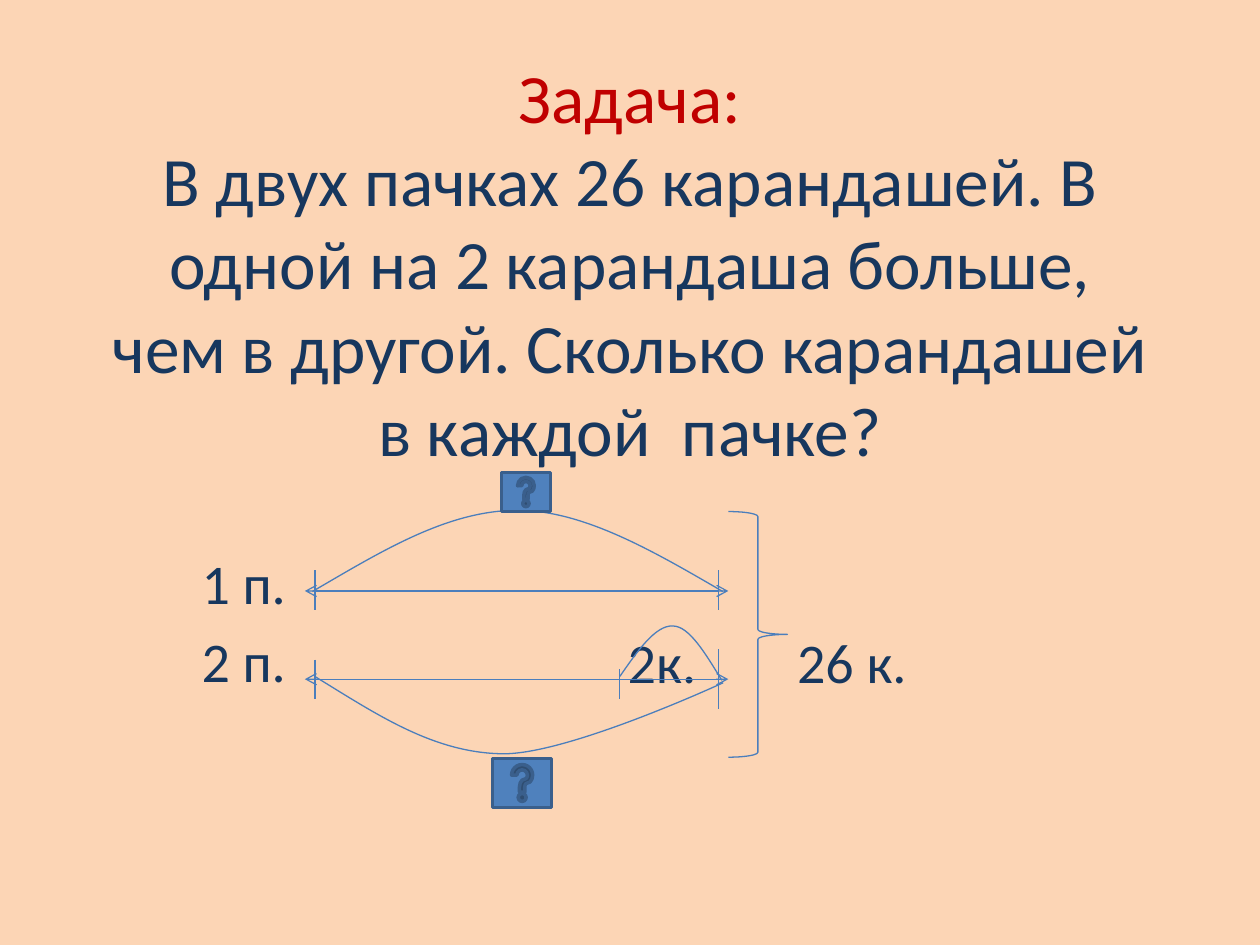
from lxml import etree
from pptx import Presentation
from pptx.dml.color import RGBColor
from pptx.enum.shapes import MSO_CONNECTOR, MSO_SHAPE
from pptx.enum.text import MSO_ANCHOR, MSO_AUTO_SIZE, PP_ALIGN
from pptx.oxml.ns import qn
from pptx.util import Pt

STRAIGHT = MSO_CONNECTOR.STRAIGHT
BRACE, HELP = MSO_SHAPE.RIGHT_BRACE, MSO_SHAPE.ACTION_BUTTON_HELP
TOP, MIDDLE = MSO_ANCHOR.TOP, MSO_ANCHOR.MIDDLE
CENTER, JUSTIFY = PP_ALIGN.CENTER, PP_ALIGN.JUSTIFY
NO_FIT = MSO_AUTO_SIZE.NONE

PEACH, RED, NAVY = "FCD5B5", "C00000", "17375E"
LINE, BUTTON, BUTTON_EDGE = "4B7EBC", "4F81BD", "3A5F8C"


def rgb(value):
    return RGBColor.from_string(value)


def prepare_text(sp, box, anchor):
    sp.left, sp.top, sp.width, sp.height = map(Pt, box)
    tf = sp.text_frame
    for name, value in {"word_wrap": True, "auto_size": NO_FIT,
                        "vertical_anchor": anchor}.items():
        setattr(tf, name, value)
    return tf


def add_run(p, text, size, color):
    r = p.add_run()
    r.text = text
    for name, value in {"size": Pt(size), "name": "Calibri"}.items():
        setattr(r.font, name, value)
    r.font.color.rgb = rgb(color)


def set_outline(sp, color=LINE, width=0.75):
    sp.line.color.rgb = rgb(color)
    sp.line.width = Pt(width)


def add_title(s, box):
    p = prepare_text(s.shapes.title, box, MIDDLE).paragraphs[0]
    p.alignment = CENTER
    add_run(p, "Задача:", 39.6, RED)
    p.add_line_break()
    add_run(p, "В двух пачках 26 карандашей. В одной на 2 карандаша больше, "
               "чем в другой. Сколько карандашей в каждой  пачке?", 39.6, NAVY)


def fill_labels(sp, box, labels):
    tf = prepare_text(sp, box, TOP)
    for i, label in enumerate(labels):
        p = tf.add_paragraph() if i else tf.paragraphs[0]
        p.alignment, p.space_before = JUSTIFY, Pt(6.4)
        add_run(p, label, 32, NAVY)


def add_labels(s, box):
    x, y, w, h = box
    fill_labels(s.placeholders[1], box, ["1 п.", "2 п."])
    # Amounts beside the second row
    for offset, width, label in ((243.6, 60, "2к."), (340.4, 90, "26 к.")):
        label_box = (x + offset, y + 45.4, width, 54)
        sp = s.shapes.add_textbox(*map(Pt, label_box))
        fill_labels(sp, label_box, [label])


def add_line(s, x1, y1, x2, y2, arrows=False):
    line = s.shapes.add_connector(STRAIGHT, *map(Pt, (x1, y1, x2, y2)))
    set_outline(line)
    if arrows:
        ln = line.line._get_or_add_ln()
        for end in ("a:headEnd", "a:tailEnd"):
            etree.SubElement(ln, qn(end), type="arrow")
    etree.SubElement(line._element.spPr, qn("a:effectLst"))


def add_curve(s, box, controls):
    """Draw joined cubic curves; controls are fractions of the box."""
    x, y, w, h = box
    points = [(Pt(x + w * fx), Pt(y + h * fy)) for fx, fy in controls]
    builder = s.shapes.build_freeform(*points[0])
    builder.add_line_segments(points[1:], close=False)
    sp = builder.convert_to_shape()
    # Each three straight segments become one cubic
    segments = list(sp._element.iter(qn("a:lnTo")))
    for i in range(0, len(segments), 3):
        cubic, *rest = segments[i:i + 3]
        cubic.tag = qn("a:cubicBezTo")
        for segment in rest:
            cubic.append(segment[0])
            segment.getparent().remove(segment)
    sp.shadow.inherit = False
    sp.fill.background()
    set_outline(sp)


def add_shape(s, kind, box):
    sp = s.shapes.add_shape(kind, *map(Pt, box))
    sp.shadow.inherit = False
    return sp


def add_diagram(s, box):
    x, y, w, h = box
    right = x + w
    row1, row2 = y + 67.7, y + 118.1
    first, split, last = x + 5.8, x + 180, right - 5.8

    # Arrows and tick marks: x, centre y, half height
    for row in (row1, row2):
        add_line(s, x, row, right, row, arrows=True)
    add_line(s, first, row1, last, row1)
    for tick, mid, half in ((first, row1 - 0.5, 11.2), (last, row1 - 0.5, 11.2),
                            (first, row2, 11.2), (last, row2, 17),
                            (split, row2 + 3, 8.6)):
        add_line(s, tick, mid - half, tick, mid + half)

    # Arcs over both packs and over the difference
    add_curve(s, (x + 4.3, y + 21.6, 234.5, 46.4),
              [(0, 1), (.17, .5), (.33, 0), (.5, 0),
               (.66, 0), (.83, .5), (1, 1)])
    add_curve(s, (first, y + 116.6, 233.3, 44.6),
              [(0, 0), (.15, .48), (.29, .98), (.46, .99),
               (.62, 1), (1, .08), (1, .08)])
    add_curve(s, (split, y + 87.1, 58.3, 31.7),
              [(0, .93), (.17, .48), (.35, 0), (.52, .02),
               (.68, .02), (.84, .52), (1, 1)])

    # Brace for the total
    brace = add_shape(s, BRACE, (right, y + 22.3, 33.8, 140.4))
    brace.fill.background()
    set_outline(brace)

    # Question marks
    for button_box in ((x + 112.3, y, 28.1, 22.3),
                       (x + 107.3, y + h - 28.1, 33.8, 28.1)):
        button = add_shape(s, HELP, button_box)
        button.fill.solid()
        button.fill.fore_color.rgb = rgb(BUTTON)
        set_outline(button, BUTTON_EDGE, 2)


def main():
    prs = Presentation()
    prs.slide_width, prs.slide_height = Pt(720), Pt(540)
    s = prs.slides.add_slide(prs.slide_layouts[0])
    s.background.fill.solid()
    s.background.fill.fore_color.rgb = rgb(PEACH)
    add_title(s, (54, 16.6, 612, 266.4))
    add_labels(s, (108, 309.6, 504, 180))
    add_diagram(s, (174.2, 270, 242, 191.5))
    prs.save("out.pptx")


if __name__ == "__main__":
    main()
